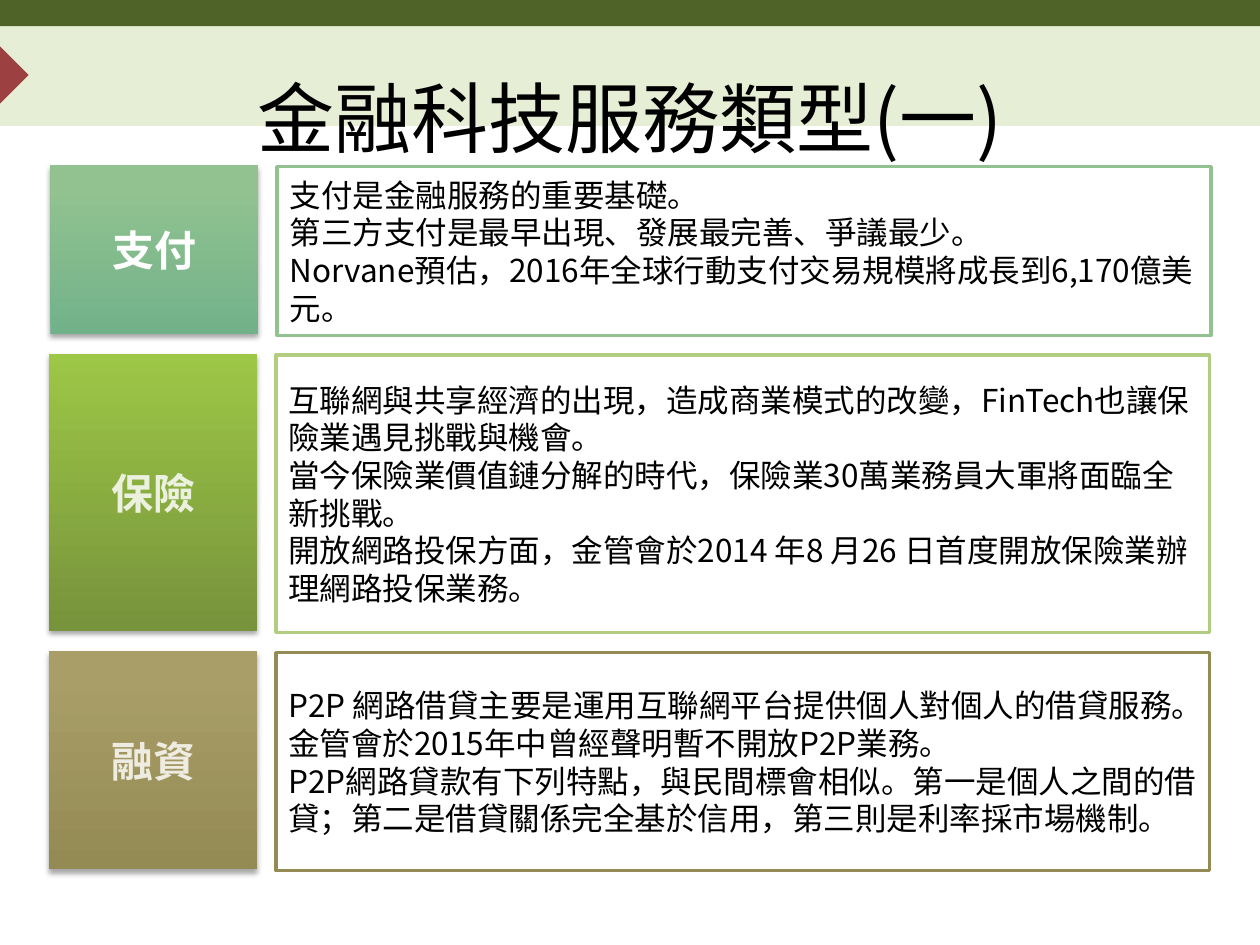
from lxml import etree
from pptx import Presentation
from pptx import util as u
from pptx.dml.color import RGBColor
from pptx.enum import shapes, text
from pptx.oxml import ns

Pt = u.Pt
FONT = "Noto Sans CJK SC"
BLACK = RGBColor(0x00, 0x00, 0x00)
WHITE = RGBColor(0xFF, 0xFF, 0xFF)
BAND = RGBColor(0xE6, 0xEF, 0xD5)
BAR = RGBColor(0x4F, 0x62, 0x28)
MARKER = RGBColor(0x9C, 0x40, 0x42)
MINT = RGBColor(0x92, 0xC2, 0x90)
SEA = RGBColor(0x72, 0xB2, 0x8A)
LIME = RGBColor(0x9D, 0xC7, 0x46)
OLIVE = RGBColor(0x77, 0x93, 0x3C)
PALE_LIME = RGBColor(0xB2, 0xCD, 0x81)
IVORY_GREEN = RGBColor(0xEB, 0xF1, 0xDE)
SAND = RGBColor(0xA9, 0x9E, 0x67)
KHAKI = RGBColor(0x94, 0x8A, 0x54)
IVORY = RGBColor(0xEE, 0xEC, 0xE1)

SERVICES = [
    ("支付", 28.8, 94.6, 96.5, SEA, MINT, 0.87, MINT, WHITE, [
        "支付是金融服務的重要基礎。",
        "第三方支付是最早出現、發展最完善、爭議最少。",
        "Norvane預估，2016年全球行動支付交易規模將成長到6,170億美元。",
    ]),
    ("保險", 28.1, 202.3, 158.4, OLIVE, LIME, 1, PALE_LIME, IVORY_GREEN, [
        "互聯網與共享經濟的出現，造成商業模式的改變，FinTech也讓保險業遇見挑戰與機會。",
        "當今保險業價值鏈分解的時代，保險業30萬業務員大軍將面臨全新挑戰。",
        "開放網路投保方面，金管會於2014 年8 月26 日首度開放保險業辦理網路投保業務。",
    ]),
    ("融資", 28.1, 372.3, 124.6, KHAKI, SAND, 0.9, KHAKI, IVORY, [
        "P2P 網路借貸主要是運用互聯網平台提供個人對個人的借貸服務。",
        "金管會於2015年中曾經聲明暫不開放P2P業務。",
        "P2P網路貸款有下列特點，與民間標會相似。第一是個人之間的借貸；"
        "第二是借貸關係完全基於信用，第三則是利率採市場機制。",
    ]),
]


class SlideBuilder:
    """Draw styled elements on the current slide."""

    def __init__(self, slide, font):
        self.slide = slide
        self.font = font

    def set_text(self, shape, lines, size, color, align, bold=False, spacing=None):
        frame = shape.text_frame
        frame.text = "\n".join(lines)
        frame.word_wrap = True
        frame.vertical_anchor = text.MSO_ANCHOR.MIDDLE
        for paragraph in frame.paragraphs:
            paragraph.alignment = align
            if spacing:
                paragraph.line_spacing = Pt(spacing)
            for run in paragraph.runs:
                run.font.name = self.font
                run.font.size = Pt(size)
                run.font.bold = bold
                run.font.color.rgb = color
                east_asian = etree.SubElement(run.font._element, ns.qn("a:ea"))
                east_asian.set("typeface", self.font)

    def rectangle(self, left, top, width, height, fill=None):
        shape = self.slide.shapes.add_shape(
            shapes.MSO_SHAPE.RECTANGLE, Pt(left), Pt(top), Pt(width), Pt(height))
        shape.shadow.inherit = False
        shape.line.fill.background()
        if fill is not None:
            shape.fill.solid()
            shape.fill.fore_color.rgb = fill
        return shape

    def title(self, wording):
        shape = self.slide.shapes.title
        shape.left, shape.top, shape.width, shape.height = (
            Pt(36), Pt(21.6), Pt(648), Pt(90))
        self.set_text(shape, [wording], 44, BLACK, text.PP_ALIGN.CENTER)
        self.slide.shapes._spTree.append(shape._element)

    def soft_shadow(self, shape):
        effects = shape._element.spPr.find(ns.qn("a:effectLst"))
        shadow = etree.SubElement(
            effects, ns.qn("a:outerShdw"), blurRad=str(Pt(3.1)),
            dist=str(Pt(1.8)), dir="5400000", rotWithShape="0")
        color = etree.SubElement(shadow, ns.qn("a:srgbClr"), val="000000")
        etree.SubElement(color, ns.qn("a:alpha"), val="35000")

    def label(self, wording, left, top, height, bottom_color, top_color, stop, color):
        shape = self.rectangle(left, top, 118.8, height)
        shape.fill.gradient()
        shape.fill.gradient_angle = 90
        first, last = shape.fill.gradient_stops
        first.position, last.position = 0, stop
        first.color.rgb, last.color.rgb = bottom_color, top_color
        self.soft_shadow(shape)
        self.set_text(shape, [wording], 24, color, text.PP_ALIGN.CENTER, bold=True)

    def panel(self, lines, left, top, height, border):
        shape = self.rectangle(left, top, 533.5, height, WHITE)
        shape.line.color.rgb = border
        shape.line.width = Pt(2)
        self.set_text(shape, lines, 18, BLACK, text.PP_ALIGN.LEFT, spacing=21.5)


def main():
    presentation = Presentation()
    presentation.slide_width, presentation.slide_height = Pt(720), Pt(540)
    slide = presentation.slides.add_slide(presentation.slide_layouts[5])
    builder = SlideBuilder(slide, FONT)
    builder.rectangle(0, 15, 720, 57, BAND)
    builder.rectangle(0, 0, 720, 15, BAR)
    builder.rectangle(-29.5, 23.8, 38, 38, MARKER).rotation = 315
    builder.title("金融科技服務類型(一)")
    for name, left, top, height, low, high, stop, border, color, lines in SERVICES:
        builder.label(name, left, top, height, low, high, stop, color)
        builder.panel(lines, left + 129.6, top + 0.7, height, border)
    presentation.save("out.pptx")


if __name__ == "__main__":
    main()
